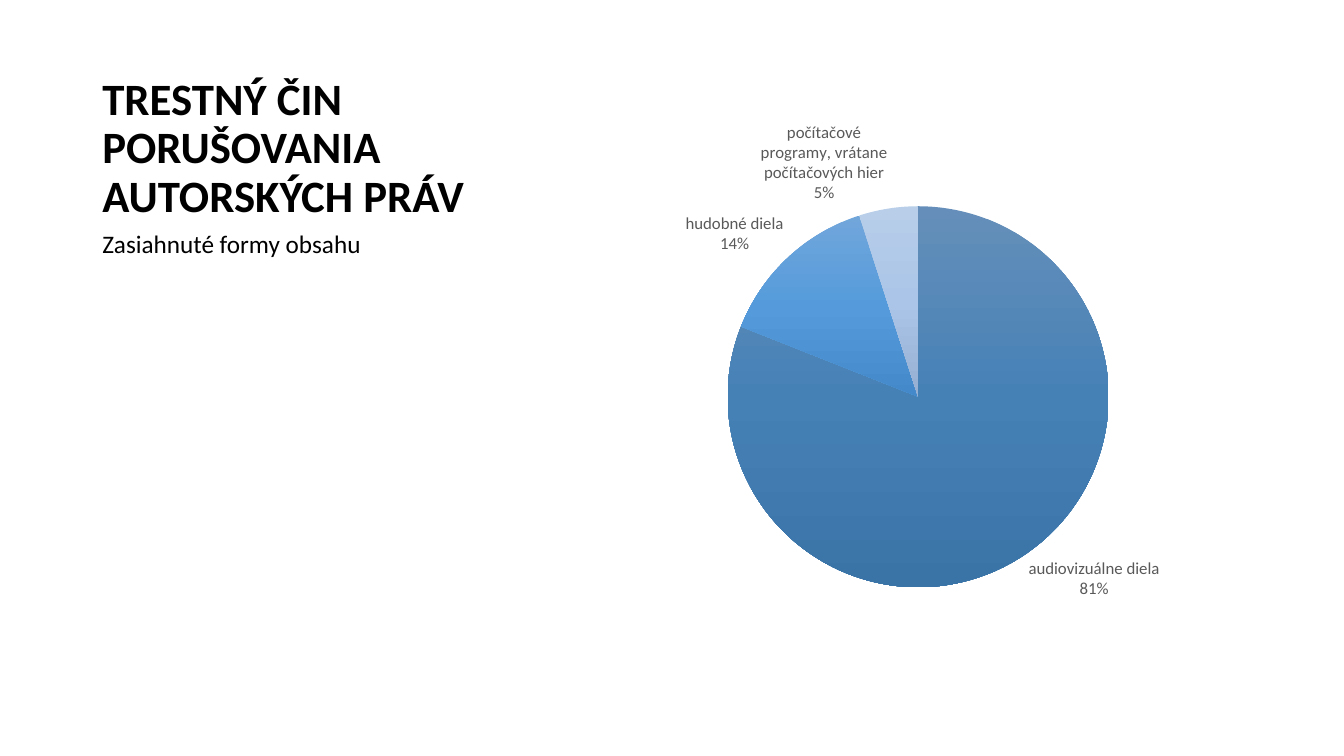
"""Build a slide with a heading and a pie chart of infringed content types."""

from copy import deepcopy
from dataclasses import dataclass

from lxml.etree import SubElement
from pptx import Presentation
from pptx.chart.data import CategoryChartData
from pptx.chart.series import PieSeries
from pptx.dml.color import RGBColor
from pptx.enum.chart import XL_CHART_TYPE, XL_LABEL_POSITION
from pptx.enum.text import MSO_ANCHOR
from pptx.oxml.ns import qn
from pptx.slide import Slide
from pptx.util import Pt

FONT = "Calibri"
BLACK = RGBColor(0x00, 0x00, 0x00)
GREY = RGBColor(0x59, 0x59, 0x59)
STEEL = (RGBColor(0x65, 0x8F, 0xBA), RGBColor(0x46, 0x81, 0xB6), RGBColor(0x3A, 0x73, 0xA6))
AZURE = (RGBColor(0x71, 0xA6, 0xDB), RGBColor(0x55, 0x9B, 0xDB), RGBColor(0x44, 0x8A, 0xCA))
PALE = (RGBColor(0xB8, 0xCE, 0xE9), RGBColor(0xAA, 0xC5, 0xE8), RGBColor(0x94, 0xAF, 0xD2))
PLOT_AREA = {"x": 0.23, "y": 0.18, "w": 0.56, "h": 0.71}


@dataclass(frozen=True)
class Heading:
    text: str
    top: float
    height: float
    size: float
    bold: bool
    anchor: MSO_ANCHOR


@dataclass(frozen=True)
class Slice:
    category: str
    percent: int
    shades: tuple[RGBColor, RGBColor, RGBColor]


HEADINGS = (
    Heading("TRESTNÝ ČIN PORUŠOVANIA AUTORSKÝCH PRÁV", 36, 126, 32, True, MSO_ANCHOR.BOTTOM),
    Heading("Zasiahnuté formy obsahu", 162, 300, 18, False, MSO_ANCHOR.TOP),
)
SLICES = (
    Slice("audiovizuálne diela", 81, STEEL),
    Slice("hudobné diela", 14, AZURE),
    Slice("počítačové programy, vrátane počítačových hier", 5, PALE),
)


def add_heading(page: Slide, heading: Heading) -> None:
    box = page.shapes.add_textbox(Pt(66), Pt(heading.top), Pt(309.6), Pt(heading.height))
    frame = box.text_frame
    frame.word_wrap = True
    frame.vertical_anchor = heading.anchor
    para = frame.paragraphs[0]
    para.text = heading.text
    para.line_spacing = 0.9
    para.font.name = FONT
    para.font.size = Pt(heading.size)
    para.font.bold = heading.bold
    para.font.color.rgb = BLACK


def shade_slice(series: PieSeries, index: int, shades: tuple[RGBColor, ...]) -> None:
    style = series.points[index].format
    style.line.fill.background()
    style.fill.gradient()
    style.fill.gradient_angle = 270
    stop_list = list(series._element.iter(qn("a:gsLst")))[index]
    stop_list.append(deepcopy(stop_list[0]))
    for position, (stop, shade) in enumerate(zip(style.fill.gradient_stops, shades)):
        stop.position = position / 2
        stop.color.rgb = shade


def add_pie(page: Slide) -> None:
    data = CategoryChartData()
    data.categories = [item.category for item in SLICES]
    data.add_series("Series 1", [item.percent for item in SLICES])
    chart = page.shapes.add_chart(
        XL_CHART_TYPE.PIE, Pt(408), Pt(78), Pt(486), Pt(384), data
    ).chart
    chart.has_legend = False
    chart.has_title = False
    chart.font.name = FONT
    chart.font.size = Pt(10)
    chart.font.color.rgb = BLACK

    plot = chart.plots[0]
    plot.vary_by_categories = True
    for index, item in enumerate(SLICES):
        shade_slice(plot.series[0], index, item.shades)

    labels = plot.series[0].data_labels
    labels.show_value = False
    labels.show_category_name = True
    labels.show_percentage = True
    labels.number_format = "0%"
    labels.number_format_is_linked = False
    labels.position = XL_LABEL_POSITION.OUTSIDE_END
    labels.font.name = FONT
    labels.font.size = Pt(12)
    labels.font.color.rgb = GREY
    separator = labels._element.makeelement(qn("c:separator"))
    separator.text = "\n"
    labels._element.find(qn("c:showBubbleSize")).addnext(separator)

    plot_area = next(chart._chartSpace.iter(qn("c:plotArea")))
    old_layout = plot_area.find(qn("c:layout"))
    if old_layout is not None:
        plot_area.remove(old_layout)
    layout = plot_area.makeelement(qn("c:layout"))
    plot_area.insert(0, layout)
    manual = SubElement(layout, qn("c:manualLayout"))
    SubElement(manual, qn("c:layoutTarget"), val="inner")
    for side in ("x", "y"):
        SubElement(manual, qn(f"c:{side}Mode"), val="edge")
    for side, share in PLOT_AREA.items():
        SubElement(manual, qn(f"c:{side}"), val=str(share))


def main() -> None:
    deck = Presentation()
    deck.slide_width = Pt(960)
    deck.slide_height = Pt(540)
    page = deck.slides.add_slide(deck.slide_layouts[6])
    for heading in HEADINGS:
        add_heading(page, heading)
    add_pie(page)
    deck.save("out.pptx")


if __name__ == "__main__":
    main()
